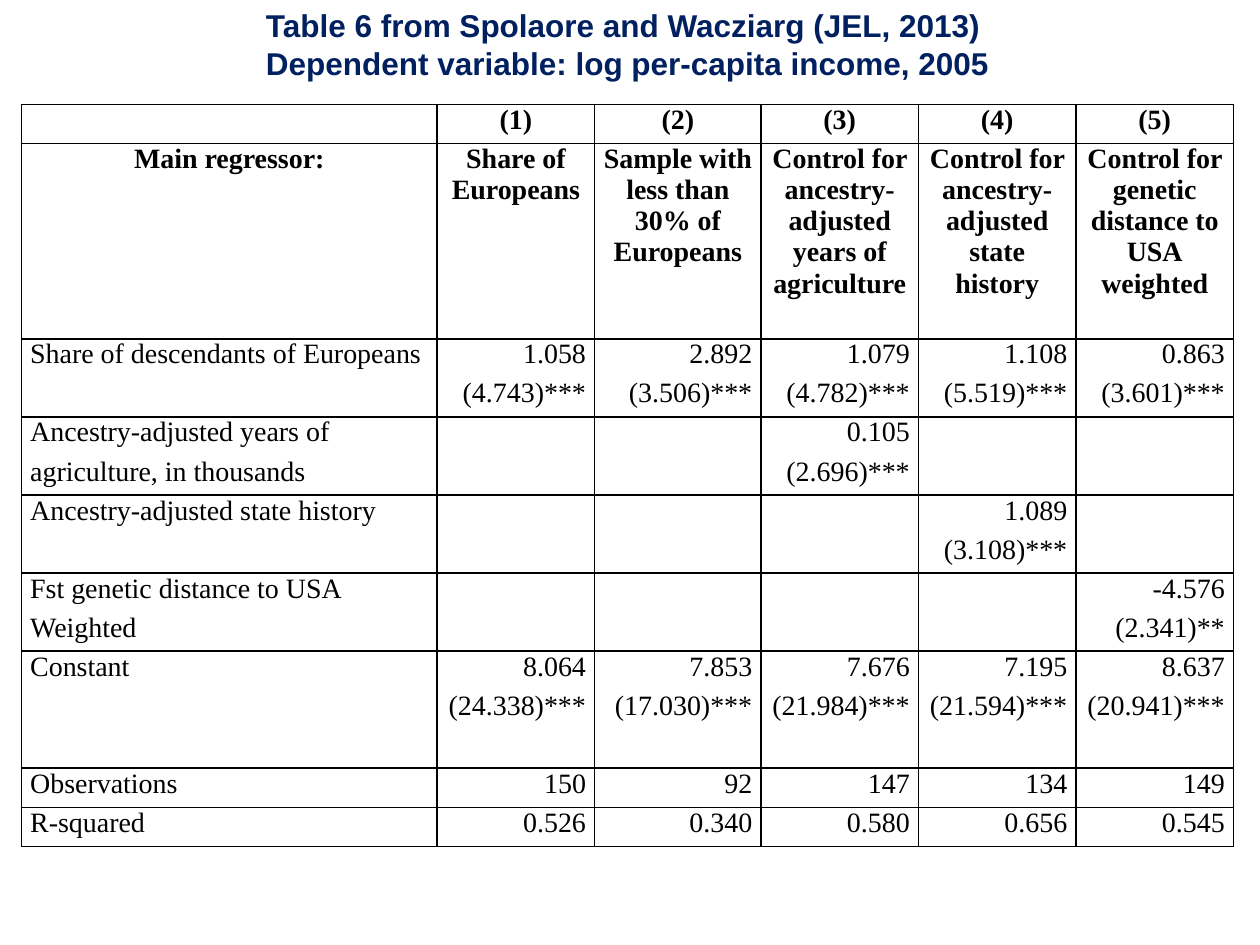
"""Build a slide with a regression table on log per-capita income."""
from lxml import etree
from pptx import Presentation
from pptx.dml.color import RGBColor
from pptx.enum.text import MSO_ANCHOR, MSO_AUTO_SIZE, PP_ALIGN
from pptx.oxml.ns import qn
from pptx.util import Inches, Pt

LEFT, CENTER, RIGHT = PP_ALIGN.LEFT, PP_ALIGN.CENTER, PP_ALIGN.RIGHT
TOP, NO_AUTOFIT = MSO_ANCHOR.TOP, MSO_AUTO_SIZE.NONE
NAVY = RGBColor(0x00, 0x20, 0x60)
BLACK = RGBColor(0x00, 0x00, 0x00)

COLUMN_WIDTHS = [3.3, 1.25, 1.32, 1.25, 1.25, 1.25]
ROW_HEIGHT = 0.31
ROW_UNITS = {1: 5, 11: 2}
HEADER_ROWS = 2
PAIR_STARTS = {2, 4, 6, 8, 10}
HEAVY_BOTTOMS = {1, 11}
ROWS = [
    ["", "(1)", "(2)", "(3)", "(4)", "(5)"],
    ["Main regressor:", "Share of Europeans", "Sample with less than 30% of Europeans",
     "Control for ancestry-adjusted\nyears of agriculture",
     "Control for ancestry-adjusted\nstate history",
     "Control for genetic distance to USA\nweighted"],
    ["Share of descendants of Europeans", "1.058", "2.892", "1.079", "1.108", "0.863"],
    ["", "(4.743)***", "(3.506)***", "(4.782)***", "(5.519)***", "(3.601)***"],
    ["Ancestry-adjusted years of", "", "", "0.105", "", ""],
    ["agriculture, in thousands", "", "", "(2.696)***", "", ""],
    ["Ancestry-adjusted state history", "", "", "", "1.089", ""],
    ["", "", "", "", "(3.108)***", ""],
    ["Fst genetic distance to USA", "", "", "", "", "-4.576"],
    ["Weighted", "", "", "", "", "(2.341)**"],
    ["Constant", "8.064", "7.853", "7.676", "7.195", "8.637"],
    ["", "(24.338)***", "(17.030)***", "(21.984)***", "(21.594)***", "(20.941)***"],
    ["Observations", "150", "92", "147", "134", "149"],
    ["R-squared", "0.526", "0.340", "0.580", "0.656", "0.545"],
]


def format_text(text_frame, alignment, color, **font_values):
    for paragraph in text_frame.paragraphs:
        paragraph.alignment = alignment
        for run in paragraph.runs:
            run.font.color.rgb = color
            for name, value in font_values.items():
                setattr(run.font, name, value)


def add_border(cell, side, points):
    properties = cell._tc.get_or_add_tcPr()
    line = etree.SubElement(properties, qn(f"a:ln{side}"), w=str(Pt(points)))
    if points:
        fill = etree.SubElement(line, qn("a:solidFill"))
        etree.SubElement(fill, qn("a:srgbClr"), val=str(BLACK))
    else:
        etree.SubElement(line, qn("a:noFill"))


presentation = Presentation()
presentation.slide_width, presentation.slide_height = Inches(10), Inches(7.5)
slide = presentation.slides.add_slide(presentation.slide_layouts[5])

title = slide.shapes.title
title.left, title.top = Inches(0.58), Inches(0)
title.width, title.height = Inches(8.8), Inches(0.71)
title.text_frame.text = ("Table 6 from Spolaore and Wacziarg (JEL, 2013) \n"
                         "Dependent variable: log per-capita income, 2005")
title.text_frame.vertical_anchor = TOP
title.text_frame.auto_size = NO_AUTOFIT
format_text(title.text_frame, CENTER, NAVY, name="Arial", size=Pt(18), bold=True)

row_heights = [ROW_HEIGHT * ROW_UNITS.get(row, 1) for row in range(len(ROWS))]
table = slide.shapes.add_table(
    len(ROWS), len(COLUMN_WIDTHS), Inches(0.17), Inches(0.83),
    Inches(sum(COLUMN_WIDTHS)), Inches(sum(row_heights))).table
table.first_row = table.horz_banding = False
for column, width in zip(table.columns, COLUMN_WIDTHS):
    column.width = Inches(width)

bottom_widths = [0 if row in PAIR_STARTS else 1.5 if row in HEAVY_BOTTOMS else 1
                 for row in range(len(ROWS))]
top_widths = [1] + bottom_widths[:-1]
cell_format = {"margin_left": Inches(0.07), "margin_right": Inches(0.07),
               "margin_top": 0, "margin_bottom": 0}
for row_index, texts in enumerate(ROWS):
    table.rows[row_index].height = Inches(row_heights[row_index])
    is_header = row_index < HEADER_ROWS
    borders = {"L": 1, "R": 1, "T": top_widths[row_index], "B": bottom_widths[row_index]}
    for column_index, text in enumerate(texts):
        cell = table.cell(row_index, column_index)
        cell.text = text
        for name, value in cell_format.items():
            setattr(cell, name, value)
        for side, points in borders.items():
            add_border(cell, side, points)
        cell.fill.background()
        alignment = CENTER if is_header else RIGHT if column_index else LEFT
        format_text(cell.text_frame, alignment, BLACK,
                    name="Times New Roman", size=Pt(16), bold=is_header)

presentation.save("out.pptx")
